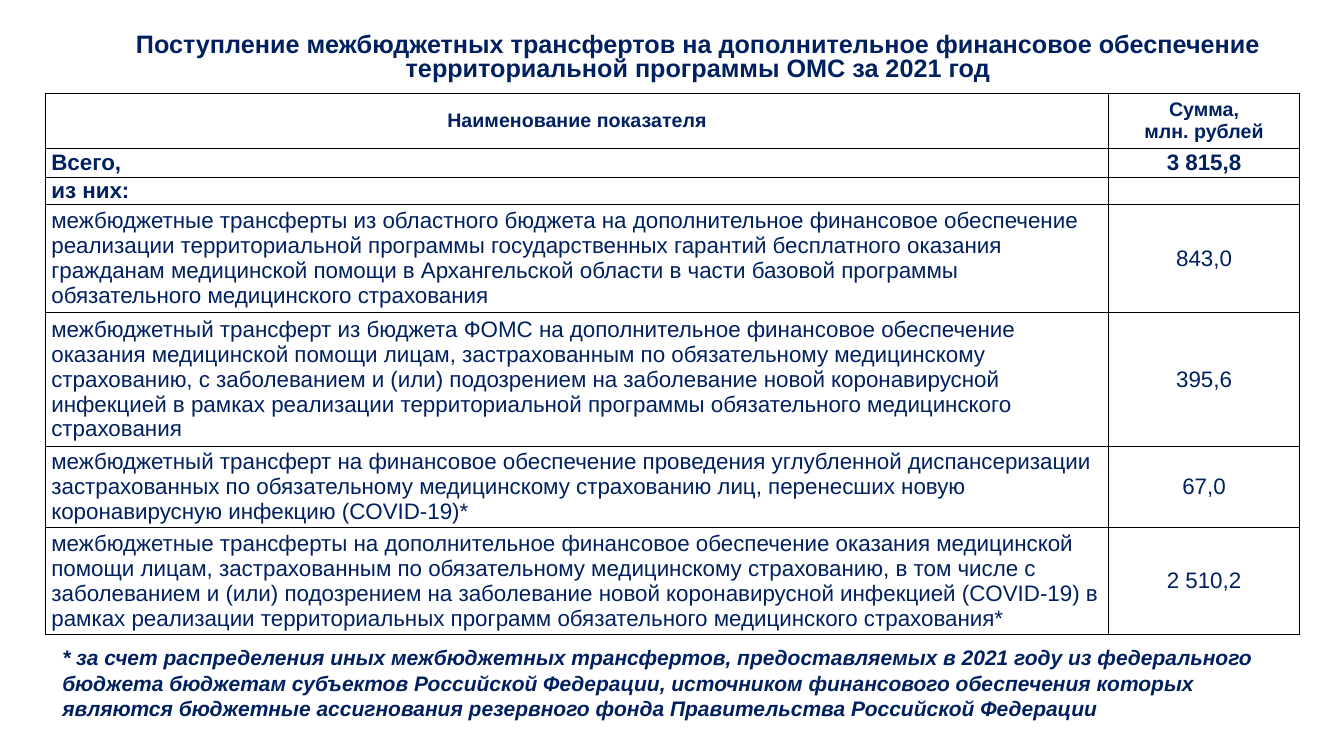
from dataclasses import dataclass

import pptx
import pptx.dml.color
import pptx.enum.text
import pptx.util
from lxml import etree
from pptx.oxml.ns import qn

Pt = pptx.util.Pt
ALIGN = pptx.enum.text.PP_ALIGN
ANCHOR = pptx.enum.text.MSO_ANCHOR
COLORS = {"navy": "002060", "black": "000000"}
FONT = "Arial"
WIDTHS = (759.6, 136.1)
SIDES = ("lnL", "lnR", "lnT", "lnB")


@dataclass
class Row:
    height: float
    name: str
    total: str
    size: float = 16
    bold: bool = False
    align: ALIGN = ALIGN.LEFT


@dataclass
class Note:
    left: float
    top: float
    width: float
    height: float
    text: str
    size: float
    align: ALIGN = ALIGN.LEFT
    italic: bool = False
    spacing: float = 1.0


ROWS = [
    Row(39.6, "Наименование показателя", "Сумма,\vмлн. рублей", 14, True, ALIGN.CENTER),
    Row(20.9, "Всего,", "3 815,8", bold=True),
    Row(18.7, "из них:", "", bold=True),
    Row(75.6, "межбюджетные трансферты из областного бюджета на дополнительное "
        "финансовое обеспечение реализации территориальной программы государственных "
        "гарантий бесплатного оказания гражданам медицинской помощи в Архангельской "
        "области в части базовой программы обязательного медицинского страхования",
        "843,0"),
    Row(94.3, "межбюджетный трансферт из бюджета ФОМС на дополнительное финансовое "
        "обеспечение оказания медицинской помощи лицам, застрахованным по обязательному "
        "медицинскому страхованию, с заболеванием и (или) подозрением на заболевание "
        "новой коронавирусной инфекцией в рамках реализации территориальной программы "
        "обязательного медицинского страхования", "395,6"),
    Row(56.9, "межбюджетный трансферт на финансовое обеспечение проведения углубленной "
        "диспансеризации застрахованных по обязательному медицинскому страхованию лиц, "
        "перенесших новую коронавирусную инфекцию (COVID-19)*", "67,0"),
    Row(69.8, "межбюджетные трансферты на дополнительное финансовое обеспечение оказания "
        "медицинской помощи лицам, застрахованным по обязательному медицинскому "
        "страхованию, в том числе с заболеванием и (или) подозрением на заболевание "
        "новой коронавирусной инфекцией (COVID-19) в рамках реализации территориальных "
        "программ обязательного медицинского страхования*", "2 510,2"),
]
NOTES = [
    Note(64.1, 20.9, 869, 51.8, "Поступление межбюджетных трансфертов на дополнительное "
         "финансовое обеспечение территориальной программы ОМС за 2021 год",
         18, ALIGN.CENTER, spacing=0.8),
    Note(37.4, 457.2, 884.2, 61.9, "* за счет распределения иных межбюджетных трансфертов, "
         "предоставляемых в 2021 году из федерального бюджета бюджетам субъектов "
         "Российской Федерации, источником финансового обеспечения которых являются "
         "бюджетные ассигнования резервного фонда Правительства Российской Федерации",
         15, italic=True),
]


def style(para, size: float, bold: bool, align: ALIGN, italic: bool = False) -> None:
    para.alignment = align
    for run in para.runs:
        font = run.font
        font.name, font.size, font.bold, font.italic = FONT, Pt(size), bold, italic
        font.color.rgb = pptx.dml.color.RGBColor.from_string(COLORS["navy"])
    if not para.runs:
        # An empty cell takes its line height from the paragraph end mark.
        etree.SubElement(para._p, qn("a:endParaRPr"), sz=str(int(size * 100)))


def border(cell, shown: tuple[str, ...]) -> None:
    """Draw the shown sides in black and clear the others."""
    props = cell._tc.get_or_add_tcPr()
    for side in SIDES:
        line = etree.SubElement(props, qn(f"a:{side}"), w=str(Pt(1)))
        if side in shown:
            fill = etree.SubElement(line, qn("a:solidFill"))
            etree.SubElement(fill, qn("a:srgbClr"), val=COLORS["black"])
        else:
            etree.SubElement(line, qn("a:noFill"))
    cell.fill.background()


def fill_cell(cell, text: str, row: Row, align: ALIGN) -> None:
    cell.text_frame.text = text
    cell.vertical_anchor = ANCHOR.MIDDLE
    cell.margin_left = cell.margin_right = Pt(4.3)
    cell.margin_top = cell.margin_bottom = 0
    style(cell.text_frame.paragraphs[0], row.size, row.bold, align)
    border(cell, SIDES)


def add_grid(slide) -> None:
    tail = 36.7
    high = sum(row.height for row in ROWS) + tail
    frame = slide.shapes.add_table(len(ROWS) + 1, len(WIDTHS), Pt(32.4), Pt(66.5),
                                   Pt(sum(WIDTHS)), Pt(high))
    table = frame.table
    table.first_row = table.horz_banding = False
    for col, width in zip(table.columns, WIDTHS):
        col.width = Pt(width)
    for i, row in enumerate(ROWS):
        table.rows[i].height = Pt(row.height)
        fill_cell(table.cell(i, 0), row.name, row, row.align)
        fill_cell(table.cell(i, 1), row.total, row, ALIGN.CENTER)
    last = len(ROWS)
    table.rows[last].height = Pt(tail)
    table.cell(last, 0).merge(table.cell(last, 1))
    for cell in table.rows[last].cells:
        border(cell, ("lnT",))


def add_note(slide, note: Note) -> None:
    box = slide.shapes.add_textbox(Pt(note.left), Pt(note.top), Pt(note.width), Pt(note.height))
    frame = box.text_frame
    frame.word_wrap = True
    frame.text = note.text
    para = frame.paragraphs[0]
    para.line_spacing = note.spacing
    style(para, note.size, True, note.align, note.italic)


def main() -> None:
    deck = pptx.Presentation()
    deck.slide_width, deck.slide_height = Pt(960), Pt(540)
    slide = deck.slides.add_slide(deck.slide_layouts[6])
    title, foot = NOTES
    add_note(slide, title)
    add_grid(slide)
    add_note(slide, foot)
    deck.save("out.pptx")


if __name__ == "__main__":
    main()
